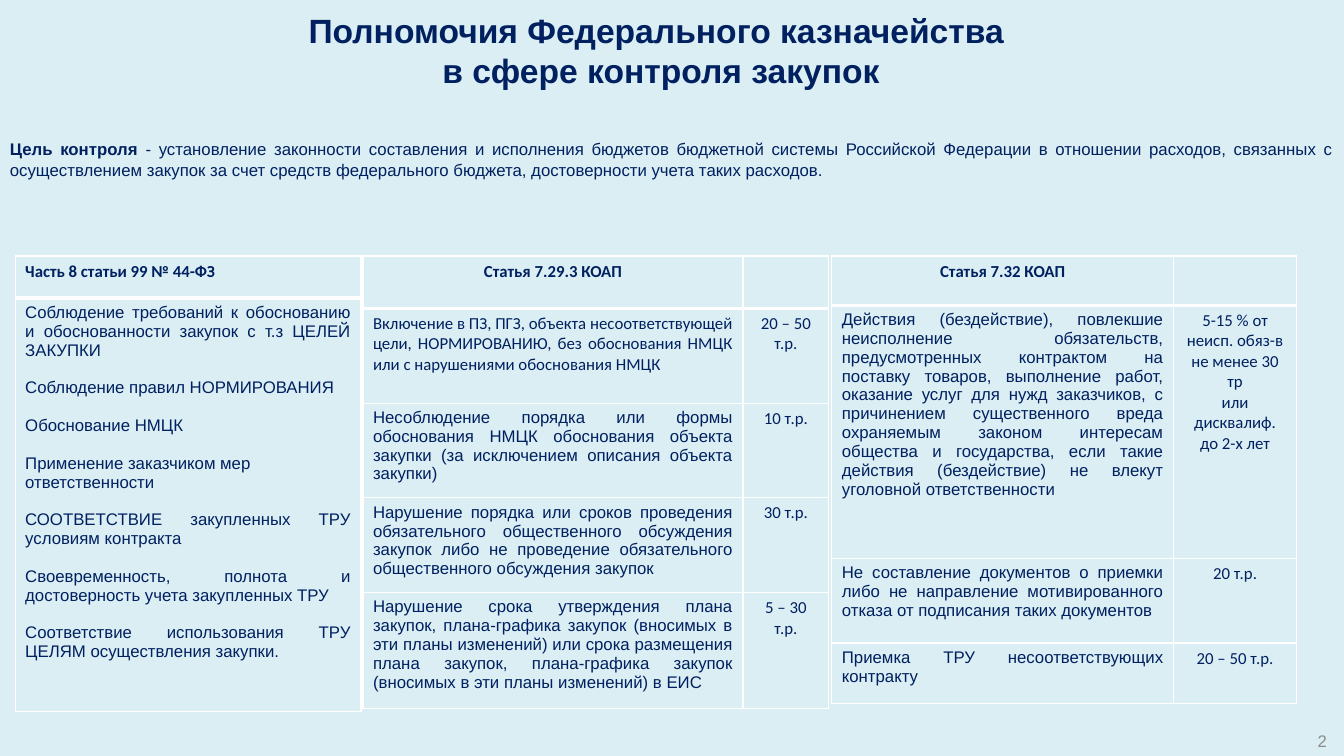
from lxml import etree
from pptx import Presentation
from pptx.dml.color import RGBColor
from pptx.enum.shapes import MSO_SHAPE as Shape
from pptx.enum.text import MSO_ANCHOR as Anchor, PP_ALIGN as Align
from pptx.oxml.ns import qn
from pptx.util import Inches, Pt

COLORS = {"back": "DBEEF4", "navy": "002060", "grey": "8C8C8C", "border": "FFFFFF"}


def write(para, text, size=12, font="Arial", color="navy", bold=False, align=Align.JUSTIFY):
    """Append one formatted span; a vertical tab in the text is a line break."""
    para.alignment = align
    for index, line in enumerate(text.split("\v")):
        if index:
            para.add_line_break()
        span = para.add_run()
        span.text = line
        span.font.size = Pt(size)
        span.font.name = font
        span.font.bold = bold
        span.font.color.rgb = RGBColor.from_string(COLORS[color])


def set_borders(cell, **widths):
    """Draw the cell borders lnL, lnR, lnT, lnB with widths in points."""
    properties = cell._tc.get_or_add_tcPr()
    for position, (side, width) in enumerate(widths.items()):
        line = etree.Element(qn(f"a:{side}"), w=str(Pt(width)))
        fill = etree.SubElement(line, qn("a:solidFill"))
        etree.SubElement(fill, qn("a:srgbClr"), val=COLORS["border"])
        properties.insert(position, line)


deck = Presentation()
deck.slide_width, deck.slide_height = Inches(13.33), Inches(7.5)
page = deck.slides.add_slide(deck.slide_layouts[6])
page.background.fill.solid()
page.background.fill.fore_color.rgb = RGBColor.from_string(COLORS["back"])

# Title and page number
title = page.shapes.add_textbox(Inches(1.3), Inches(0.13), Inches(10.51), Inches(0.74)).text_frame
title.word_wrap = True
title.vertical_anchor = Anchor.MIDDLE
write(title.paragraphs[0], "Полномочия Федерального казначейства \vв сфере контроля закупок",
      size=24, bold=True, align=Align.CENTER)

number = page.shapes.add_textbox(Inches(12.96), Inches(7.2), Inches(0.3), Inches(0.3)).text_frame
number.word_wrap = True
number.vertical_anchor = Anchor.MIDDLE
write(number.paragraphs[0], "2", color="grey", align=Align.RIGHT)

# Purpose of control
goal = page.shapes.add_shape(Shape.RECTANGLE, 0, Inches(1.09), Inches(13.33), Inches(0.98))
goal.shadow.inherit = False
goal.fill.solid()
goal.fill.fore_color.rgb = RGBColor.from_string(COLORS["back"])
goal.line.fill.background()
goal.text_frame.word_wrap = True
goal.text_frame.vertical_anchor = Anchor.TOP
goal.text_frame.margin_top = Inches(0.29)
goal_para = goal.text_frame.paragraphs[0]
write(goal_para, "Цель контроля ", bold=True)
write(goal_para, "- установление законности составления и исполнения бюджетов бюджетной системы "
      "Российской Федерации в отношении расходов, связанных с осуществлением закупок за счет "
      "средств федерального бюджета, достоверности учета таких расходов.")

# Tables: left edge, column widths, row heights, header, body rows
# A cell holds a list of paragraphs.
TABLES = [
    (3.6, [3.77, 0.85], [0.52, 0.94, 0.94, 0.94, 1.15], "Статья 7.29.3 КОАП", [
        [["Включение в ПЗ, ПГЗ, объекта несоответствующей цели, НОРМИРОВАНИЮ, без обоснования "
          "НМЦК или с нарушениями обоснования НМЦК"], ["20 – 50 т.р."]],
        [["Несоблюдение порядка или формы обоснования НМЦК обоснования объекта закупки "
          "(за исключением описания объекта закупки)"], ["10 т.р."]],
        [["Нарушение порядка или сроков проведения обязательного общественного обсуждения "
          "закупок либо не проведение обязательного общественного обсуждения закупок"],
         ["30 т.р."]],
        [["Нарушение срока утверждения плана закупок, плана-графика закупок (вносимых в эти "
          "планы изменений) или срока размещения плана закупок, плана-графика закупок "
          "(вносимых в эти планы изменений) в ЕИС"], ["5 – 30 т.р."]],
    ]),
    (8.25, [3.39, 1.22], [0.49, 2.51, 0.84, 0.6], "Статья 7.32 КОАП", [
        [["Действия (бездействие), повлекшие неисполнение обязательств, предусмотренных "
          "контрактом на поставку товаров, выполнение работ, оказание услуг для нужд "
          "заказчиков, с причинением существенного вреда охраняемым законом интересам "
          "общества и государства, если такие действия (бездействие) не влекут уголовной "
          "ответственности"],
         ["5-15 % от неисп. обяз-в не менее 30 тр", "или дисквалиф.", "до 2-х лет"]],
        [["Не составление документов о приемки либо не направление мотивированного отказа "
          "от подписания таких документов"], ["20 т.р."]],
        [["Приемка ТРУ несоответствующих контракту"], ["20 – 50 т.р."]],
    ]),
    (0.15, [3.43], [0.42, 4.1], "Часть 8 статьи 99 № 44-ФЗ", [
        [["Соблюдение требований к обоснованию и обоснованности закупок с т.з ЦЕЛЕЙ ЗАКУПКИ",
          "Соблюдение правил НОРМИРОВАНИЯ",
          "Обоснование НМЦК",
          "Применение заказчиком мер ответственности",
          "СООТВЕТСТВИЕ закупленных ТРУ условиям контракта",
          "Своевременность, полнота и достоверность учета закупленных ТРУ",
          "Соответствие использования ТРУ ЦЕЛЯМ осуществления закупки."]],
    ]),
]
LEFT_ALIGNED = "Применение заказчиком мер ответственности"
CALIBRI_TEXT = "Включение в ПЗ"

for left, widths, heights, header, body in TABLES:
    table = page.shapes.add_table(len(heights), len(widths), Inches(left), Inches(2.54),
                                  Inches(sum(widths)), Inches(sum(heights))).table
    table.horz_banding = False
    for column, width in zip(table.columns, widths):
        column.width = Inches(width)
    for row, height in zip(table.rows, heights):
        row.height = Inches(height)

    for row_index in range(len(heights)):
        for column_index in range(len(widths)):
            cell = table.cell(row_index, column_index)
            cell.fill.background()
            set_borders(cell, lnL=1, lnR=1, lnT=3 if row_index == 1 else 1,
                        lnB=3 if row_index == 0 else 1)

    write(table.cell(0, 0).text_frame.paragraphs[0], header, font="Calibri", bold=True,
          align=Align.CENTER if len(widths) > 1 else Align.JUSTIFY)

    for row_index, row_texts in enumerate(body, start=1):
        for column_index, texts in enumerate(row_texts):
            frame = table.cell(row_index, column_index).text_frame
            is_fine = column_index == 1
            for index, text in enumerate(texts):
                para = frame.add_paragraph() if index else frame.paragraphs[0]
                if index and not is_fine:
                    para.space_before = Pt(13.5)
                align = Align.LEFT if text == LEFT_ALIGNED else Align.JUSTIFY
                write(para, text, align=Align.CENTER if is_fine else align,
                      font="Calibri" if is_fine or text.startswith(CALIBRI_TEXT) else "Arial")

deck.save("out.pptx")
